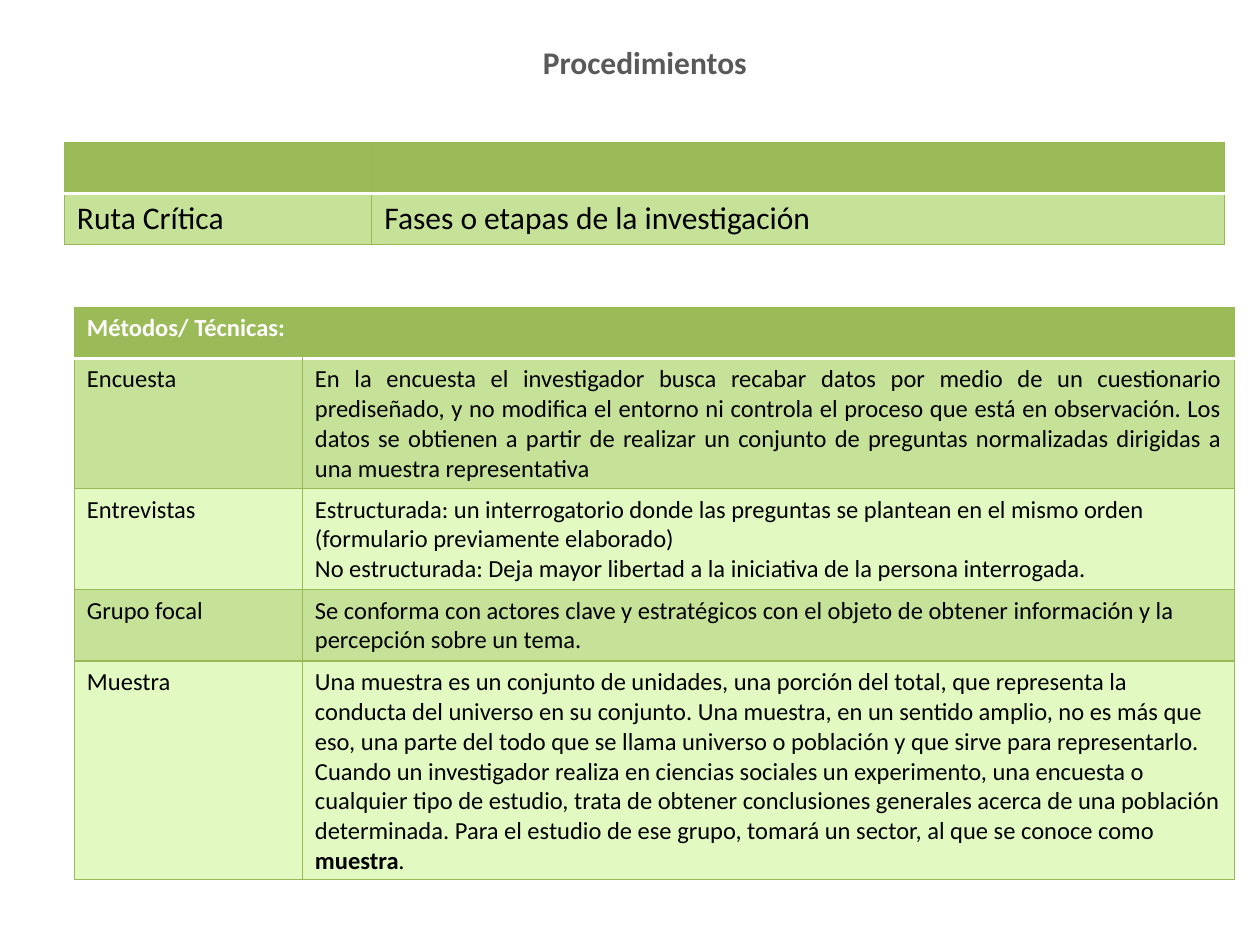
from lxml import etree
from pptx import Presentation
from pptx.dml.color import RGBColor
from pptx.enum.text import MSO_ANCHOR, MSO_AUTO_SIZE, PP_ALIGN
from pptx.oxml.ns import qn
from pptx.util import Pt

CENTER, JUSTIFY, LEFT = PP_ALIGN.CENTER, PP_ALIGN.JUSTIFY, PP_ALIGN.LEFT
TOP = MSO_ANCHOR.TOP
GROW = MSO_AUTO_SIZE.SHAPE_TO_FIT_TEXT
FONT = "Calibri"
GREEN = RGBColor(0x9B, 0xBB, 0x59)
BORDER = RGBColor(0x98, 0xB9, 0x55)
BAND = RGBColor(0xC6, 0xE1, 0x98)
PALE = RGBColor(0xE2, 0xFA, 0xC2)
GRAY = RGBColor(0x59, 0x59, 0x59)
WHITE = RGBColor(0xFF, 0xFF, 0xFF)
BLACK = RGBColor(0, 0, 0)

ROUTE_ROWS = [["", ""], ["Ruta Crítica", "Fases o etapas de la investigación"]]
METHOD_ROWS = [
    ["Métodos/ Técnicas:", ""],
    ["Encuesta",
     "En la encuesta el investigador busca recabar datos por medio de un cuestionario "
     "prediseñado, y no modifica el entorno ni controla el proceso que está en observación. "
     "Los datos se obtienen a partir de realizar un conjunto de preguntas normalizadas "
     "dirigidas a una muestra representativa"],
    ["Entrevistas",
     "Estructurada: un interrogatorio donde las preguntas se plantean en el mismo orden "
     "(formulario previamente elaborado)\n"
     "No estructurada: Deja mayor libertad a la iniciativa de la persona interrogada."],
    ["Grupo focal",
     "Se conforma con actores clave y estratégicos con el objeto de obtener información "
     "y la percepción sobre un tema."],
    ["Muestra",
     "Una muestra es un conjunto de unidades, una porción del total, que representa la "
     "conducta del universo en su conjunto. Una muestra, en un sentido amplio, no es más "
     "que eso, una parte del todo que se llama universo o población y que sirve para "
     "representarlo. Cuando un investigador realiza en ciencias sociales un experimento, "
     "una encuesta o cualquier tipo de estudio, trata de obtener conclusiones generales "
     "acerca de una población determinada. Para el estudio de ese grupo, tomará un sector, "
     "al que se conoce como "],
]


def add_run(paragraph, text, size, color, bold=False, italic=False):
    """Append one formatted run."""
    run = paragraph.add_run()
    run.text = text
    font = run.font
    font.name, font.size, font.bold, font.italic = FONT, Pt(size), bold, italic
    font.color.rgb = color


def set_border(cell, edge, color, width):
    """Draw one edge of a cell, ahead of its fill in the XML."""
    properties = cell._tc.get_or_add_tcPr()
    line = etree.Element(qn(f"a:{edge}"), w=str(Pt(width)))
    fill = etree.SubElement(line, qn("a:solidFill"))
    etree.SubElement(fill, qn("a:srgbClr"), val=str(color))
    position = len(properties.findall("*")) - 1
    properties.insert(position, line)


def fill_cell(cell, text, row_index, size):
    """Fill, frame and write one table cell."""
    header = row_index == 0
    cell.fill.solid()
    cell.fill.fore_color.rgb = GREEN if header else (BAND if row_index % 2 else PALE)
    for edge in ("lnL", "lnR", "lnT", "lnB"):
        white = (header and edge == "lnB") or (row_index == 1 and edge == "lnT")
        set_border(cell, edge, WHITE if white else BORDER, 2 if white else 0.75)
    frame = cell.text_frame
    for index, line in enumerate(text.split("\n")):
        paragraph = frame.add_paragraph() if index else frame.paragraphs[0]
        paragraph.font.size = Pt(size)
        if line:
            add_run(paragraph, line, size, WHITE if header else BLACK, bold=header)


def add_green_table(slide, left, top, widths, heights, rows, size):
    """Add a banded green table and return it."""
    shape = slide.shapes.add_table(len(rows), len(widths), Pt(left), Pt(top),
                                   Pt(sum(widths)), Pt(sum(heights)))
    table = shape.table
    table.horz_banding = False
    for column, width in zip(table.columns, widths):
        column.width = Pt(width)
    for row_index, (row, height) in enumerate(zip(table.rows, heights)):
        row.height = Pt(height)
        for cell, text in zip(row.cells, rows[row_index]):
            fill_cell(cell, text, row_index, size)
    return table


def add_title(slide, left, top, width, height):
    """Place the slide title in its placeholder."""
    title = slide.shapes.title
    title.left, title.top, title.width, title.height = map(Pt, (left, top, width, height))
    frame = title.text_frame
    frame.word_wrap, frame.auto_size, frame.vertical_anchor = True, GROW, TOP
    paragraph = frame.paragraphs[0]
    paragraph.alignment = CENTER
    add_run(paragraph, "Procedimientos", 18, GRAY, bold=True)


def add_methods(slide, left, top):
    """Add the table of methods and techniques."""
    table = add_green_table(slide, left, top, [130.3, 532.8],
                            [29.2, 74.2, 57.7, 40.6, 125.1], METHOD_ROWS, 14)
    table.cell(0, 0).merge(table.cell(0, 1))
    table.cell(0, 0).text_frame.paragraphs[0].alignment = LEFT
    table.cell(1, 1).text_frame.paragraphs[0].alignment = JUSTIFY
    sample = table.cell(4, 1).text_frame.paragraphs[0]
    add_run(sample, "muestra", 14, BLACK, bold=True)
    add_run(sample, ".", 14, BLACK, italic=True)


def main():
    """Build and save the slide."""
    presentation = Presentation()
    presentation.slide_width, presentation.slide_height = Pt(720), Pt(540)
    slide = presentation.slides.add_slide(presentation.slide_layouts[5])
    add_title(slide, 190, 21, 357, 29)
    add_methods(slide, 42.5, 175.5)
    add_green_table(slide, 36.8, 81.2, [175.7, 487.4], [29.2, 29.2], ROUTE_ROWS, 18)
    presentation.save("out.pptx")


if __name__ == "__main__":
    main()
